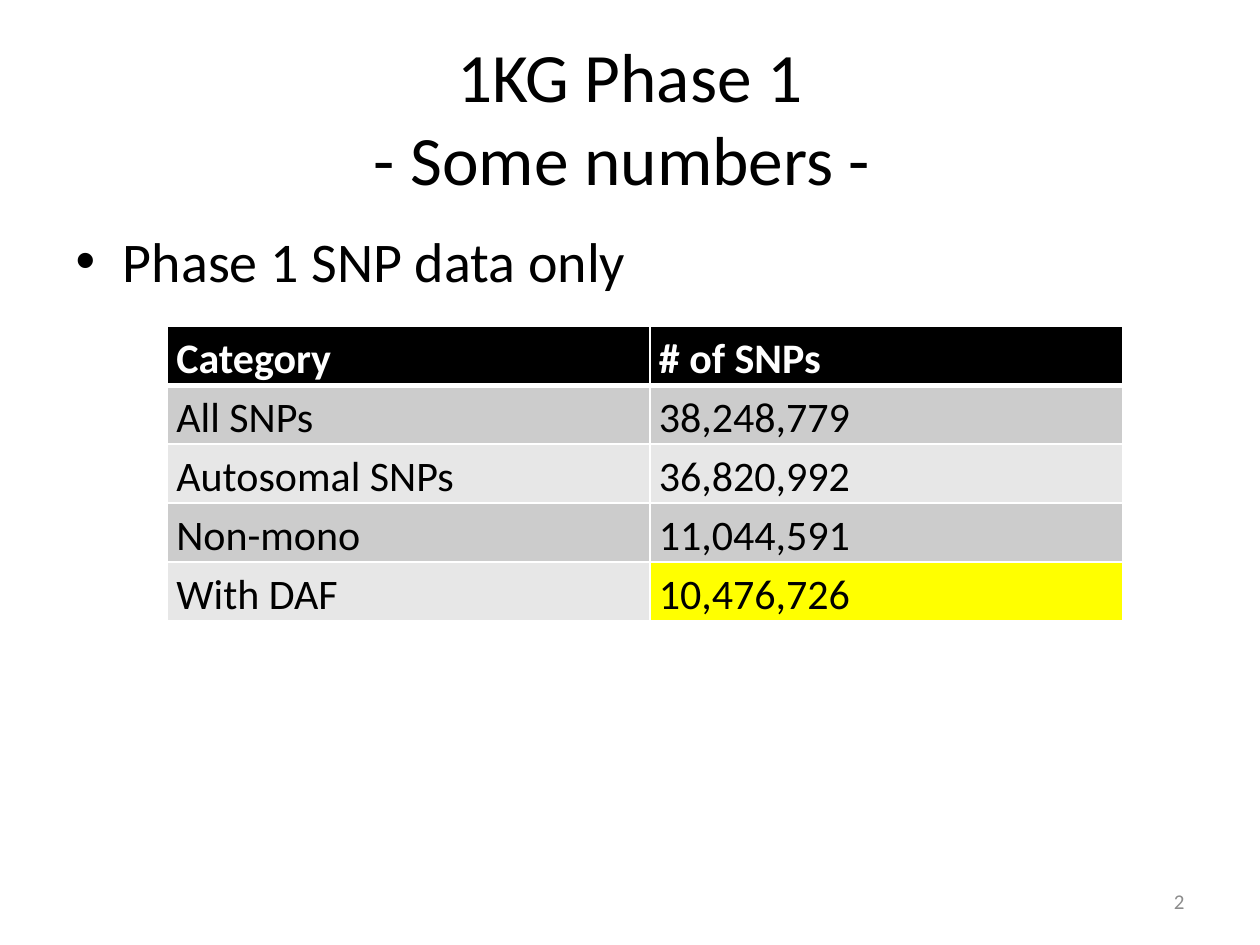
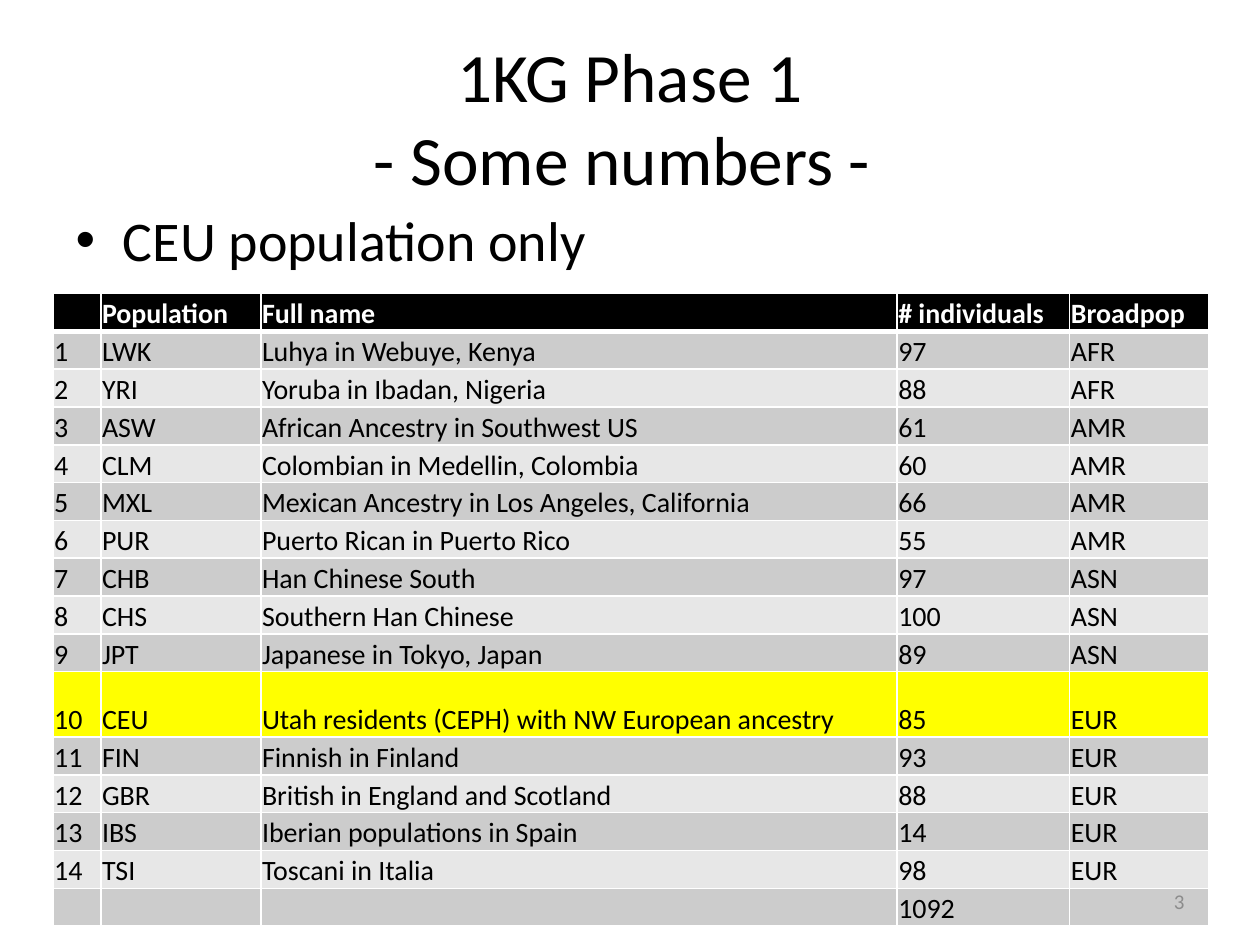
"""Build two slides on the SNP and sample counts of 1KG Phase 1."""
import dataclasses
import typing

import lxml.etree
import pptx
import pptx.dml.color
import pptx.enum.text
import pptx.oxml.ns
import pptx.slide
import pptx.text.text
import pptx.util

Inches = pptx.util.Inches
Pt = pptx.util.Pt
Anchor = pptx.enum.text.MSO_ANCHOR
Align = pptx.enum.text.PP_ALIGN
qn = pptx.oxml.ns.qn


@dataclasses.dataclass(frozen=True)
class Theme:
    font: str = "Calibri"
    black: str = "000000"
    white: str = "FFFFFF"
    dark: str = "CCCCCC"
    light: str = "E7E7E7"
    mark: str = "FFFF00"
    gray: str = "8C8C8C"
    title: float = 39.6
    list: float = 32
    foot: float = 12
    thin: float = 1
    thick: float = 3


@dataclasses.dataclass(frozen=True)
class Box:
    left: float
    top: float
    width: float
    height: float

    def spans(self) -> tuple:
        return tuple(Inches(n) for n in dataclasses.astuple(self))


@dataclasses.dataclass(frozen=True)
class Grid:
    left: float
    top: float
    cols: tuple
    rows: tuple
    tall: tuple
    size: float
    side: float
    head: float
    anchor: Anchor
    space: typing.Optional[float]
    marks: frozenset


@dataclasses.dataclass(frozen=True)
class Page:
    number: int
    point: str
    top: float
    grid: Grid


THEME = Theme()
TITLE = "1KG Phase 1\v- Some numbers - "
TITLE_BOX = Box(0.5, 0.3, 9, 1.25)
FOOT_BOX = Box(7.17, 6.95, 2.33, 0.4)

COUNTS = (
    ("Category", "# of SNPs"),
    ("All SNPs", "38,248,779"),
    ("Autosomal SNPs", "36,820,992"),
    ("Non-mono", "11,044,591"),
    ("With DAF", "10,476,726"),
)

GROUPS = (
    ("LWK", "Luhya in Webuye, Kenya", "97", "AFR"),
    ("YRI", "Yoruba in Ibadan, Nigeria", "88", "AFR"),
    ("ASW", "African Ancestry in Southwest US", "61", "AMR"),
    ("CLM", "Colombian in Medellin, Colombia", "60", "AMR"),
    ("MXL", "Mexican Ancestry in Los Angeles, California", "66", "AMR"),
    ("PUR", "Puerto Rican in Puerto Rico", "55", "AMR"),
    ("CHB", "Han Chinese South", "97", "ASN"),
    ("CHS", "Southern Han Chinese", "100", "ASN"),
    ("JPT", "Japanese in Tokyo, Japan", "89", "ASN"),
    ("CEU", "Utah residents (CEPH) with NW European ancestry", "85", "EUR"),
    ("FIN", "Finnish in Finland", "93", "EUR"),
    ("GBR", "British in England and Scotland", "88", "EUR"),
    ("IBS", "Iberian populations in Spain", "14", "EUR"),
    ("TSI", "Toscani in Italia", "98", "EUR"),
)
SAMPLES = (
    ("", "Population", "Full name", "# individuals", "Broadpop"),
    *((str(n), *group) for n, group in enumerate(GROUPS, 1)),
    ("", "", "", "1092", ""),
)

PAGES = (
    Page(2, "Phase 1 SNP data only", 1.75, Grid(
        1.33, 2.59, (3.83, 3.75), COUNTS, (0.41,) * 5, 24, 0.07, 0,
        Anchor.TOP, 1.15, frozenset({(4, 1)}))),
    Page(3, "CEU population only", 1.58, Grid(
        0.42, 2.33, (0.38, 1.27, 5.05, 1.37, 1.1), SAMPLES,
        (0.3,) * 10 + (0.52,) + (0.3,) * 5, 16, 0.01, 0.01,
        Anchor.BOTTOM, None, frozenset((10, col) for col in range(5)))),
)


def paint(code: str) -> pptx.dml.color.RGBColor:
    return pptx.dml.color.RGBColor.from_string(code)


def style(frame: pptx.text.text.TextFrame, size: float, tint: str,
          bold: bool = False) -> None:
    for para in frame.paragraphs:
        for run in para.runs:
            run.font.name = THEME.font
            run.font.size = Pt(size)
            run.font.bold = bold
            run.font.color.rgb = paint(tint)


def fill_box(shape: typing.Any, box: Box, text: str, size: float,
             tint: str = THEME.black) -> pptx.text.text.TextFrame:
    shape.left, shape.top, shape.width, shape.height = box.spans()
    frame = shape.text_frame
    frame.text = text
    frame.word_wrap = True
    frame.auto_size = pptx.enum.text.MSO_AUTO_SIZE.NONE
    style(frame, size, tint)
    return frame


def edge(cell: typing.Any, row: int) -> None:
    props = cell._tc.get_or_add_tcPr()
    heavy = {0: "lnB", 1: "lnT"}.get(row)
    for side in ("lnL", "lnR", "lnT", "lnB"):
        width = THEME.thick if side == heavy else THEME.thin
        line = lxml.etree.SubElement(props, qn(f"a:{side}"), w=str(Pt(width)))
        solid = lxml.etree.SubElement(line, qn("a:solidFill"))
        lxml.etree.SubElement(solid, qn("a:srgbClr"), val=THEME.white)


def draw_cell(cell: typing.Any, grid: Grid, row: int, col: int) -> None:
    cell.margin_left = cell.margin_right = Inches(grid.side)
    cell.margin_top, cell.margin_bottom = Inches(grid.head), Inches(0)
    cell.vertical_anchor = grid.anchor
    edge(cell, row)
    if row == 0:
        shade = THEME.black
    elif (row, col) in grid.marks:
        shade = THEME.mark
    else:
        shade = THEME.dark if row % 2 else THEME.light
    cell.fill.solid()
    cell.fill.fore_color.rgb = paint(shade)
    para = cell.text_frame.paragraphs[0]
    if grid.space:
        para.line_spacing = grid.space
    text = grid.rows[row][col]
    if text:
        para.text = text
        tint = THEME.black if row else THEME.white
        style(cell.text_frame, grid.size, tint, row == 0)
    else:
        lxml.etree.SubElement(para._p, qn("a:endParaRPr"),
                              sz=str(int(grid.size * 100)))


def draw_grid(slide: pptx.slide.Slide, grid: Grid) -> None:
    box = Box(grid.left, grid.top, sum(grid.cols), sum(grid.tall))
    table = slide.shapes.add_table(
        len(grid.rows), len(grid.cols), *box.spans()).table
    for col, width in zip(table.columns, grid.cols):
        col.width = Inches(width)
    for row, height in zip(table.rows, grid.tall):
        row.height = Inches(height)
    for row in range(len(grid.rows)):
        for col in range(len(grid.cols)):
            draw_cell(table.cell(row, col), grid, row, col)


def draw_page(deck: typing.Any, page: Page) -> None:
    slide = deck.slides.add_slide(deck.slide_layouts[1])
    title = fill_box(slide.shapes.title, TITLE_BOX, TITLE, THEME.title)
    title.vertical_anchor = Anchor.MIDDLE
    title.paragraphs[0].alignment = Align.CENTER
    fill_box(slide.placeholders[1], Box(0.5, page.top, 9, 4.95),
             page.point, THEME.list)
    draw_grid(slide, page.grid)
    foot = fill_box(slide.shapes.add_textbox(*FOOT_BOX.spans()), FOOT_BOX,
                    str(page.number), THEME.foot, THEME.gray)
    foot.vertical_anchor = Anchor.MIDDLE
    foot.paragraphs[0].alignment = Align.RIGHT


def main() -> None:
    deck = pptx.Presentation()
    deck.slide_width, deck.slide_height = Inches(10), Inches(7.5)
    for page in PAGES:
        draw_page(deck, page)
    deck.save("out.pptx")


if __name__ == "__main__":
    main()
